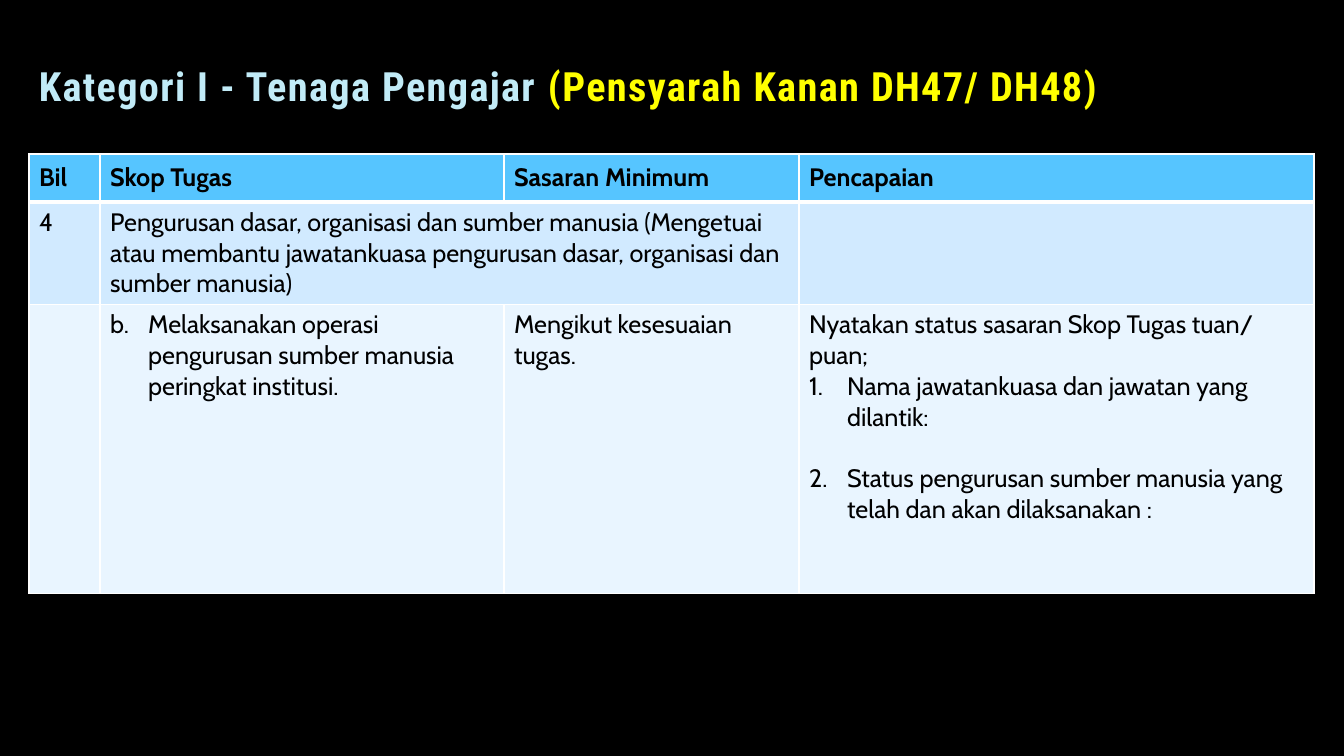
import pptx
import pptx.dml.color
import pptx.enum.text
import pptx.oxml.ns
import pptx.util
from lxml import etree

COLOURS = {
    "background": "000000",
    "text": "000000",
    "border": "FFFFFF",
    "header": "56C5FF",
    "topic": "D1EAFF",
    "detail": "E9F5FF",
    "title": "C1EBF7",
    "highlight": "FFFF00",
}
COLUMN_WIDTHS = [71, 404, 295, 515]
ROW_HEIGHTS = [48, 102, 289]
ROW_FILLS = ["header", "topic", "detail"]

# A cell is a list of paragraphs: (text, numbering scheme, first number, points before)
ROWS = [
    [[("Bil",)], [("Skop Tugas",)], [("Sasaran Minimum",)], [("Pencapaian",)]],
    [
        [("4",)],
        [("Pengurusan dasar, organisasi dan sumber manusia (Mengetuai atau membantu "
          "jawatankuasa pengurusan dasar, organisasi dan sumber manusia)",)],
        [],
        [],
    ],
    [
        [],
        [("Melaksanakan operasi pengurusan sumber manusia peringkat institusi.",
          "alphaLcPeriod", 2)],
        [("Mengikut kesesuaian tugas.",)],
        [
            ("Nyatakan status sasaran Skop Tugas tuan/ puan;",),
            ("Nama jawatankuasa dan jawatan yang dilantik:", "arabicPeriod", 1),
            ("Status pengurusan sumber manusia yang telah dan akan dilaksanakan :",
             "arabicPeriod", 2, 22),
        ],
    ],
]


def px(value):
    return pptx.util.Emu(round(value * 914400 / 100.8))


def rgb(name):
    return pptx.dml.color.RGBColor.from_string(COLOURS[name])


def add_element(parent, tag, **attributes):
    return etree.SubElement(parent, pptx.oxml.ns.qn(tag), attributes)


class SlideBuilder:
    title_font = "Roboto Condensed"
    body_font = "Cabin"
    body_size = 18
    list_indent = 38

    def __init__(self, presentation):
        self.slide = presentation.slides.add_slide(presentation.slide_layouts[6])
        fill = self.slide.background.fill
        fill.solid()
        fill.fore_color.rgb = rgb("background")

    def title(self, left, top, width, height, parts):
        shape = self.slide.shapes.add_textbox(px(left), px(top), px(width), px(height))
        frame = shape.text_frame
        frame.word_wrap = True
        frame.vertical_anchor = pptx.enum.text.MSO_ANCHOR.BOTTOM
        paragraph = frame.paragraphs[0]
        paragraph.line_spacing = 0.9
        paragraph.font.name = self.title_font
        paragraph.font.size = pptx.util.Pt(28.8)
        paragraph.font.bold = True
        for text, colour in parts:
            run = paragraph.add_run()
            run.text = text
            run.font.color.rgb = rgb(colour)
            run._r.get_or_add_rPr().set("spc", "100")

    def table(self, left, top, widths, heights, rows, fills):
        shape = self.slide.shapes.add_table(
            len(heights), len(widths), px(left), px(top), px(sum(widths)), px(sum(heights)))
        table = shape.table
        for column, width in zip(table.columns, widths):
            column.width = px(width)
        for index, (height, contents, fill) in enumerate(zip(heights, rows, fills)):
            table.rows[index].height = px(height)
            for cell, paragraphs in zip(table.rows[index].cells, contents):
                self.cell(cell, paragraphs, fill, index)
        return table

    def cell(self, cell, paragraphs, fill, row):
        is_header = row == 0
        self.borders(cell, top=3 if row == 1 else 1, bottom=3 if is_header else 1)
        cell.fill.solid()
        cell.fill.fore_color.rgb = rgb(fill)
        if is_header:
            cell.vertical_anchor = pptx.enum.text.MSO_ANCHOR.MIDDLE
        frame = cell.text_frame
        for index, content in enumerate(paragraphs or [("",)]):
            paragraph = frame.add_paragraph() if index else frame.paragraphs[0]
            self.paragraph(paragraph, is_header, *content)

    def paragraph(self, paragraph, bold, text, scheme=None, start=1, before=0):
        paragraph.text = text
        if before:
            paragraph.space_before = pptx.util.Pt(before)
        if scheme:
            properties = paragraph._p.get_or_add_pPr()
            indent = px(self.list_indent)
            properties.set("marL", str(indent))
            properties.set("indent", str(-indent))
            add_element(properties, "a:buFont", typeface="+mj-lt")
            add_element(properties, "a:buAutoNum", type=scheme, startAt=str(start))
        font = paragraph.font
        font.name = self.body_font
        font.size = pptx.util.Pt(self.body_size)
        font.bold = bold
        font.color.rgb = rgb("text")

    def borders(self, cell, top, bottom):
        """Draw the four cell edges; top and bottom are widths in points."""
        properties = cell._tc.get_or_add_tcPr()
        for side, width in (("L", 1), ("R", 1), ("T", top), ("B", bottom)):
            line = add_element(properties, f"a:ln{side}", w=str(pptx.util.Pt(width)))
            fill = add_element(line, "a:solidFill")
            add_element(fill, "a:srgbClr", val=COLOURS["border"])


def main():
    presentation = pptx.Presentation()
    presentation.slide_width = px(1344)
    presentation.slide_height = px(756)
    builder = SlideBuilder(presentation)
    table = builder.table(29, 154, COLUMN_WIDTHS, ROW_HEIGHTS, ROWS, ROW_FILLS)
    table.cell(1, 1).merge(table.cell(1, 2))
    builder.title(29, 47, 1146, 68, [
        ("Kategori I - Tenaga Pengajar ", "title"),
        ("(Pensyarah Kanan DH47/ DH48)", "highlight"),
    ])
    presentation.save("out.pptx")


if __name__ == "__main__":
    main()
